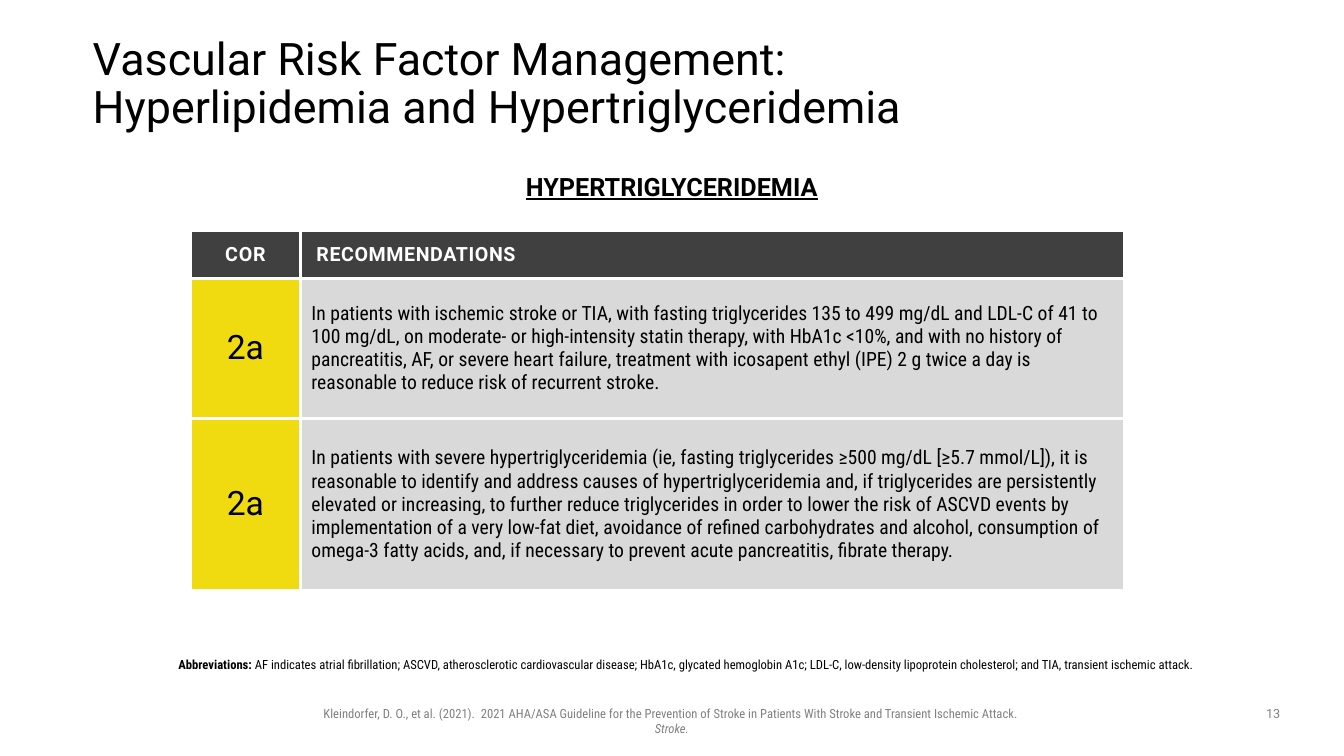
from lxml.etree import SubElement
from pptx import Presentation
from pptx.dml.color import RGBColor
from pptx.enum.text import MSO_ANCHOR, MSO_AUTO_SIZE, PP_ALIGN
from pptx.oxml.ns import qn
from pptx.util import Pt

BLACK = RGBColor(0x00, 0x00, 0x00)
WHITE = RGBColor(0xFF, 0xFF, 0xFF)
GRAY = RGBColor(0x80, 0x80, 0x80)
HEADER_GRAY = RGBColor(0x40, 0x40, 0x40)
LIGHT_GRAY = RGBColor(0xD9, 0xD9, 0xD9)
YELLOW = RGBColor(0xF0, 0xDB, 0x10)
REGULAR = "Roboto"
CONDENSED = "Roboto Condensed"


def format_runs(paragraph, font_name, size, color, bold=False):
    for run in paragraph.runs:
        run.font.name = font_name
        run.font.size = Pt(size)
        run.font.color.rgb = color
        run.font.bold = bold


def add_centered_text(left, top, width, height, text):
    """Add a wrapping text box and return its centered paragraph."""
    box = slide.shapes.add_textbox(Pt(left), Pt(top), Pt(width), Pt(height))
    box.text_frame.word_wrap = True
    paragraph = box.text_frame.paragraphs[0]
    paragraph.alignment = PP_ALIGN.CENTER
    paragraph.add_run().text = text
    return paragraph


presentation = Presentation()
presentation.slide_width = Pt(960)
presentation.slide_height = Pt(540)
slide = presentation.slides.add_slide(presentation.slide_layouts[1])

# Title
title = slide.shapes.title
title.left, title.top, title.width, title.height = Pt(66.24), Pt(28.8), Pt(828), Pt(64.08)
frame = title.text_frame
frame.text = "Vascular Risk Factor Management: \vHyperlipidemia and Hypertriglyceridemia"
frame.auto_size = MSO_AUTO_SIZE.NONE
frame.vertical_anchor = MSO_ANCHOR.MIDDLE
frame.margin_left = frame.margin_right = frame.margin_top = frame.margin_bottom = 0
paragraph = frame.paragraphs[0]
paragraph.alignment = PP_ALIGN.LEFT
paragraph.line_spacing = 0.9
format_runs(paragraph, REGULAR, 32, BLACK)

# Section heading
heading = add_centered_text(286.56, 118.8, 386.64, 28.8, "HYPERTRIGLYCERIDEMIA")
format_runs(heading, REGULAR, 18, BLACK, bold=True)
heading.runs[0].font.underline = True

# Recommendations table
rows = [
    ("COR", "RECOMMENDATIONS"),
    ("2a", "In patients with ischemic stroke or TIA, with fasting triglycerides 135 to 499 mg/dL "
           "and LDL-C of 41 to 100 mg/dL, on moderate- or high-intensity statin therapy, with "
           "HbA1c <10%, and with no history of pancreatitis, AF, or severe heart failure, treatment "
           "with icosapent ethyl (IPE) 2 g twice a day is reasonable to reduce risk of recurrent "
           "stroke."),
    ("2a", "In patients with severe hypertriglyceridemia (ie, fasting triglycerides ≥500 mg/dL "
           "[≥5.7 mmol/L]), it is reasonable to identify and address causes of "
           "hypertriglyceridemia and, if triglycerides are persistently elevated or increasing, to "
           "further reduce triglycerides in order to lower the risk of ASCVD events by "
           "implementation of a very low-fat diet, avoidance of refined carbohydrates and alcohol, "
           "consumption of omega-3 fatty acids, and, if necessary to prevent acute pancreatitis, "
           "fibrate therapy."),
]
column_widths = [78.48, 588.24]
row_heights = [33.84, 100.08, 123.12]
table = slide.shapes.add_table(
    len(rows), len(column_widths), Pt(136.08), Pt(164.88),
    Pt(sum(column_widths)), Pt(sum(row_heights))).table
table.first_row = table.horz_banding = False
for column, width in zip(table.columns, column_widths):
    column.width = Pt(width)

for row_index, (texts, height) in enumerate(zip(rows, row_heights)):
    table.rows[row_index].height = Pt(height)
    for column_index, text in enumerate(texts):
        cell = table.cell(row_index, column_index)
        cell.text = text
        cell.vertical_anchor = MSO_ANCHOR.MIDDLE
        paragraph = cell.text_frame.paragraphs[0]
        if column_index == 0:
            paragraph.alignment = PP_ALIGN.CENTER
        else:
            paragraph._p.get_or_add_pPr().set("marL", str(Pt(4.32)))
            paragraph._p.get_or_add_pPr().set("indent", "0")

        cell_properties = cell._tc.get_or_add_tcPr()
        for side in ("lnL", "lnR", "lnT", "lnB"):
            border = SubElement(cell_properties, qn(f"a:{side}"), w=str(Pt(2.25)))
            border_fill = SubElement(border, qn("a:solidFill"))
            SubElement(border_fill, qn("a:srgbClr"), val=str(WHITE))

        cell.fill.solid()
        if row_index == 0:
            cell.fill.fore_color.rgb = HEADER_GRAY
            format_runs(paragraph, REGULAR, 14, WHITE, bold=True)
            letter_spacing = "50" if column_index == 0 else "40"
            paragraph.runs[0].font._element.set("spc", letter_spacing)
            continue
        cell.margin_left = cell.margin_right = cell.margin_top = cell.margin_bottom = Pt(3.6)
        if column_index == 0:
            cell.fill.fore_color.rgb = YELLOW
            format_runs(paragraph, REGULAR, 24, BLACK)
        else:
            cell.fill.fore_color.rgb = LIGHT_GRAY
            format_runs(paragraph, CONDENSED, 14, BLACK)

# Abbreviations
body = slide.placeholders[1]
body.left, body.top, body.width, body.height = Pt(127.44), Pt(465.84), Pt(766.08), Pt(18.72)
frame = body.text_frame
frame.auto_size = MSO_AUTO_SIZE.NONE
frame.margin_left = 0
frame.margin_right = Pt(7.2)
frame.margin_top = frame.margin_bottom = Pt(3.6)
paragraph = frame.paragraphs[0]
paragraph.space_before = Pt(0)
paragraph_properties = paragraph._p.get_or_add_pPr()
paragraph_properties.set("marL", "0")
paragraph_properties.set("indent", "0")
SubElement(paragraph_properties, qn("a:buNone"))
paragraph.add_run().text = "Abbreviations: "
paragraph.add_run().text = (
    "AF indicates atrial fibrillation; ASCVD, atherosclerotic cardiovascular disease; HbA1c, "
    "glycated hemoglobin A1c; LDL-C, low-density lipoprotein cholesterol; and TIA, transient "
    "ischemic attack.")
format_runs(paragraph, CONDENSED, 9, BLACK)
paragraph.runs[0].font.bold = True

# Citation and slide number
citation = add_centered_text(
    211.68, 500.4, 536.4, 18,
    "Kleindorfer, D. O., et al. (2021).  2021 AHA/ASA Guideline for the Prevention of Stroke in "
    "Patients With Stroke and Transient Ischemic Attack.  ")
journal = citation.add_run()
journal.text = "Stroke."
journal.font.italic = True
format_runs(citation, CONDENSED, 9, GRAY)

slide_number = add_centered_text(894.24, 500.4, 30.24, 18.72, "13")
format_runs(slide_number, REGULAR, 9, GRAY)

presentation.save("out.pptx")
